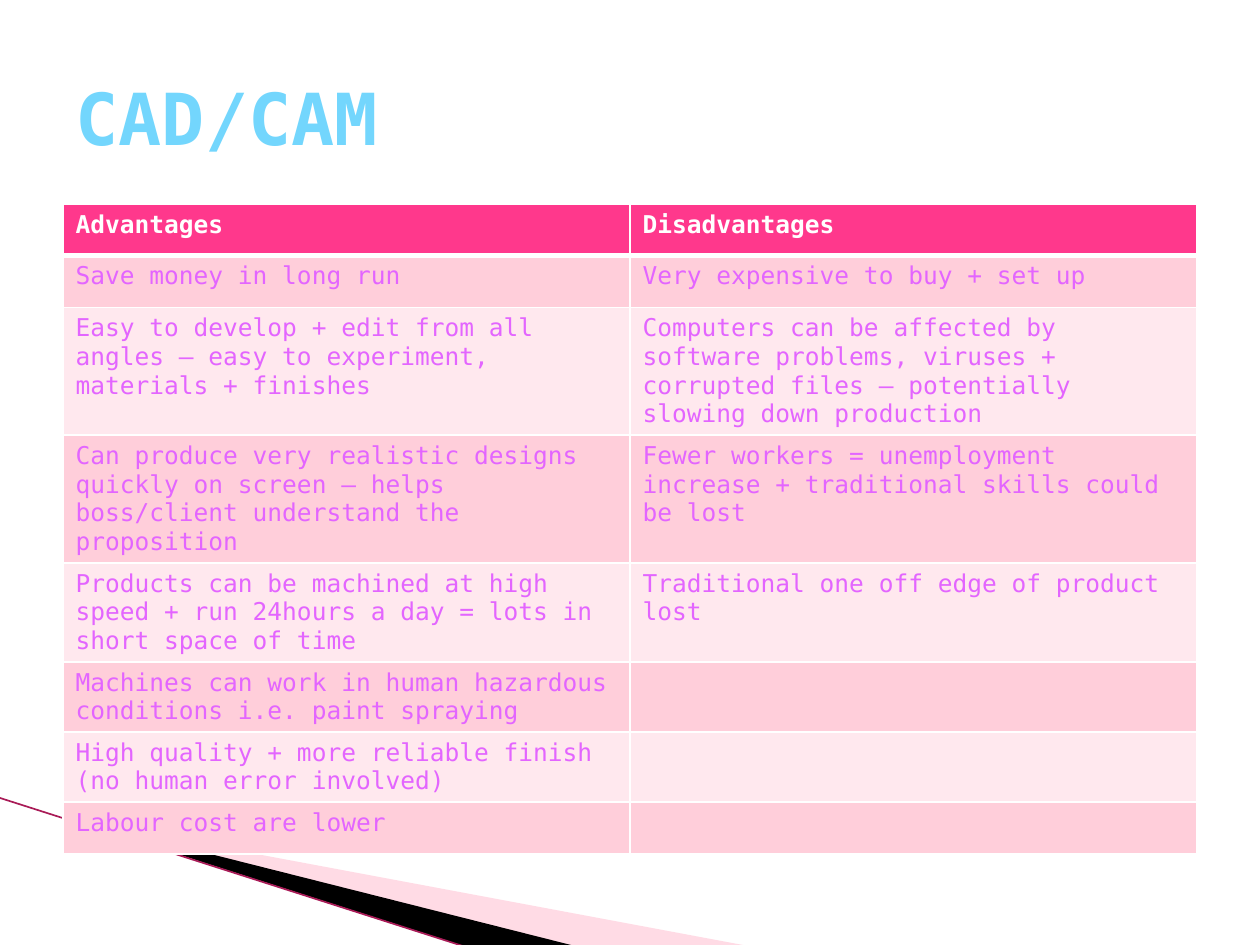
from dataclasses import dataclass

from lxml import etree
from pptx import Presentation
from pptx.dml.color import RGBColor
from pptx.enum.shapes import MSO_CONNECTOR
from pptx.enum.text import MSO_ANCHOR, MSO_AUTO_SIZE, PP_ALIGN
from pptx.oxml.ns import qn
from pptx.util import Inches, Pt

STRAIGHT = MSO_CONNECTOR.STRAIGHT
MIDDLE = MSO_ANCHOR.MIDDLE
LEFT = PP_ALIGN.LEFT
NO_AUTOFIT = MSO_AUTO_SIZE.NONE


@dataclass(frozen=True)
class Theme:
    font: str = "DejaVu Sans Mono"
    title_size: float = 41
    table_size: float = 14
    title: str = "73D6FD"
    header: str = "FF388C"
    header_text: str = "FFFFFF"
    body_text: str = "E365FF"
    bands: tuple = ("FFCEDA", "FFE8EE")
    border: str = "FFFFFF"
    pale_wedge: str = "FFA5BF"
    dark_wedge: str = "000000"
    sweep_line: str = "A91B57"


ROWS = [
    ("Advantages", "Disadvantages"),
    ("Save money in long run", "Very expensive to buy + set up"),
    ("Easy to develop + edit from all angles – easy to experiment, "
     "materials + finishes",
     "Computers can be affected by software problems, viruses + corrupted "
     "files – potentially slowing down production"),
    ("Can produce very realistic designs quickly on screen – helps "
     "boss/client understand the proposition",
     "Fewer workers = unemployment increase + traditional skills could be lost"),
    ("Products can be machined at high speed + run 24hours a day = lots in "
     "short space of time",
     "Traditional one off edge of product lost"),
    ("Machines can work in human hazardous conditions i.e. paint spraying", ""),
    ("High quality + more reliable finish (no human error involved)", ""),
    ("Labour cost are lower", ""),
]


class SlideBuilder:
    def __init__(self, slide, theme):
        self.slide = slide
        self.theme = theme

    def format_font(self, font, size, color, bold):
        values = {"name": self.theme.font, "size": Pt(size), "bold": bold}
        for name, value in values.items():
            setattr(font, name, value)
        font.color.rgb = RGBColor.from_string(color)

    def title(self, text, left, top, width, height):
        shape = self.slide.shapes.title
        position = {"left": left, "top": top, "width": width, "height": height}
        for name, value in position.items():
            setattr(shape, name, Inches(value))
        frame = shape.text_frame
        frame.text = text
        frame.auto_size = NO_AUTOFIT
        frame.vertical_anchor = MIDDLE
        paragraph = frame.paragraphs[0]
        paragraph.alignment = LEFT
        self.format_font(paragraph.runs[0].font, self.theme.title_size,
                         self.theme.title, True)

    def wedge(self, points, color, opacity=100):
        corners = [(Inches(x), Inches(y)) for x, y in points]
        builder = self.slide.shapes.build_freeform(*corners[0])
        builder.add_line_segments(corners[1:], close=True)
        shape = builder.convert_to_shape()
        shape.shadow.inherit = False
        shape.line.fill.background()
        shape.fill.solid()
        shape.fill.fore_color.rgb = RGBColor.from_string(color)
        if opacity < 100:
            color_element = shape.fill._xPr.find(".//" + qn("a:srgbClr"))
            etree.SubElement(color_element, qn("a:alpha"),
                             val=str(opacity * 1000))

    def line(self, start, end, color, width):
        connector = self.slide.shapes.add_connector(
            STRAIGHT, *(Inches(value) for value in (*start, *end)))
        connector.line.color.rgb = RGBColor.from_string(color)
        connector.line.width = Pt(width)
        etree.SubElement(connector._element.spPr, qn("a:effectLst"))

    def cell_borders(self, cell, top, bottom):
        """Draw all four borders; top and bottom are widths in points."""
        properties = cell._tc.get_or_add_tcPr()
        for side, width in {"L": 1, "R": 1, "T": top, "B": bottom}.items():
            line = etree.SubElement(properties, qn(f"a:ln{side}"),
                                    w=str(Pt(width)))
            fill = etree.SubElement(line, qn("a:solidFill"))
            etree.SubElement(fill, qn("a:srgbClr"), val=self.theme.border)

    def table(self, rows, left, top, width, row_height):
        theme = self.theme
        table = self.slide.shapes.add_table(
            len(rows), len(rows[0]), Inches(left), Inches(top),
            Inches(width), Inches(row_height * len(rows))).table
        for row_index, texts in enumerate(rows):
            is_header = row_index == 0
            fill = theme.header if is_header else theme.bands[(row_index - 1) % 2]
            color = theme.header_text if is_header else theme.body_text
            for column_index, text in enumerate(texts):
                cell = table.cell(row_index, column_index)
                self.cell_borders(cell, top=3 if row_index == 1 else 1,
                                  bottom=3 if is_header else 1)
                cell.fill.solid()
                cell.fill.fore_color.rgb = RGBColor.from_string(fill)
                if text:
                    cell.text = text
                    run = cell.text_frame.paragraphs[0].runs[0]
                    self.format_font(run.font, theme.table_size, color, is_header)


def main():
    presentation = Presentation()
    presentation.slide_width = Inches(10)
    presentation.slide_height = Inches(7.5)
    theme = Theme()
    title_only = presentation.slide_layouts[5]
    builder = SlideBuilder(presentation.slides.add_slide(title_only), theme)

    builder.wedge([(0.55, 6.5), (5.95, 7.51), (4.56, 7.51)],
                  theme.pale_wedge, opacity=40)
    builder.wedge([(0.53, 6.49), (4.57, 7.51), (3.72, 7.52), (0.54, 6.5)],
                  theme.dark_wedge)
    builder.line((-0.01, 6.33), (3.71, 7.52), theme.sweep_line, 0.95)
    builder.table(ROWS, left=0.5, top=1.62, width=9, row_height=0.41)
    builder.title("CAD/CAM", left=0.5, top=0.3, width=9, height=1.25)

    presentation.save("out.pptx")


if __name__ == "__main__":
    main()
